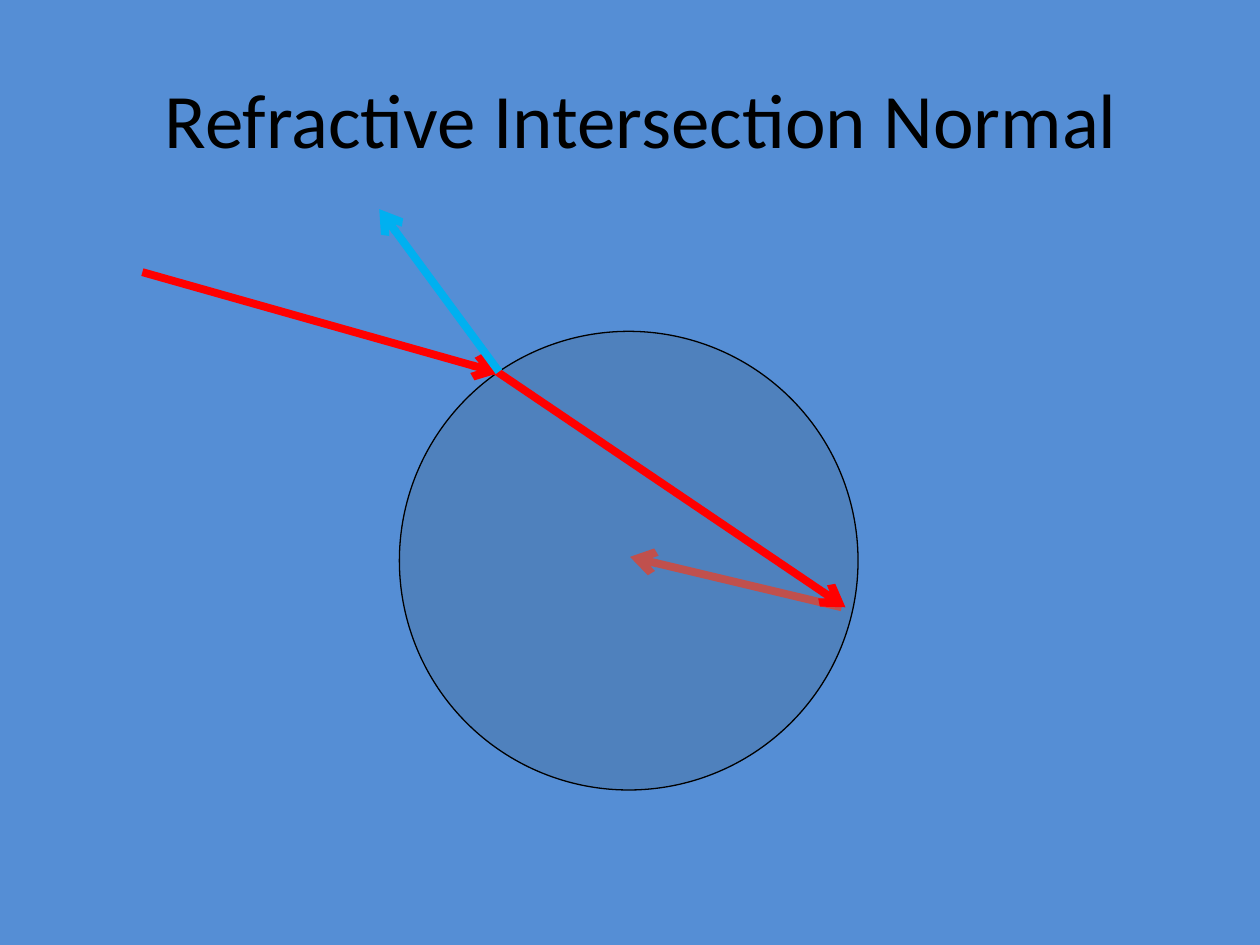
from dataclasses import dataclass

from lxml.etree import SubElement
from pptx import Presentation
from pptx.dml.color import RGBColor
from pptx.enum.shapes import MSO_CONNECTOR, MSO_SHAPE
from pptx.enum.text import MSO_ANCHOR, PP_ALIGN
from pptx.oxml.ns import qn
from pptx.util import Inches, Pt


@dataclass(frozen=True)
class Theme:
    """Colours, type and line sizes of the slide."""
    background: str = "558ED5"
    ink: str = "000000"
    sphere: str = "4F81BD"
    ray: str = "FF0000"
    inner_normal: str = "C0504D"
    outer_normal: str = "00B0F0"
    font: str = "Calibri"
    title_size: float = 44
    outline_width: float = 0.75
    ray_width: float = 4.5


THEME = Theme()


def add_title(slide, left, top, width, height, wording):
    """Place the centred title in its box."""
    title = slide.shapes.add_textbox(Inches(left), Inches(top), Inches(width), Inches(height))
    frame = title.text_frame
    frame.word_wrap = True
    frame.vertical_anchor = MSO_ANCHOR.MIDDLE
    frame.text = wording
    paragraph = frame.paragraphs[0]
    paragraph.alignment = PP_ALIGN.CENTER
    font = paragraph.runs[0].font
    font.name = THEME.font
    font.size = Pt(THEME.title_size)
    font.color.rgb = RGBColor.from_string(THEME.ink)


def add_arrow(slide, start, end, color):
    """Draw a straight arrow with an open head at its end."""
    arrow = slide.shapes.add_connector(
        MSO_CONNECTOR.STRAIGHT, *(Inches(length) for length in (*start, *end)))
    arrow.line.width = Pt(THEME.ray_width)
    arrow.line.color.rgb = RGBColor.from_string(color)
    SubElement(arrow.line._get_or_add_ln(), qn("a:tailEnd"), type="arrow")
    SubElement(arrow._element.spPr, qn("a:effectLst"))


def add_refraction(slide, left, top, diameter):
    """Draw the sphere in its square box, with rays and normals relative to it."""
    sphere = slide.shapes.add_shape(
        MSO_SHAPE.OVAL, Inches(left), Inches(top), Inches(diameter), Inches(diameter))
    sphere.shadow.inherit = False
    sphere.fill.solid()
    sphere.fill.fore_color.rgb = RGBColor.from_string(THEME.sphere)
    sphere.line.color.rgb = RGBColor.from_string(THEME.ink)
    sphere.line.width = Pt(THEME.outline_width)

    arrows = (
        ((-2.04, -0.47), (0.79, 0.33), THEME.ray),
        ((3.51, 2.19), (1.83, 1.79), THEME.inner_normal),
        ((0.76, 0.31), (3.54, 2.19), THEME.ray),
        ((0.79, 0.32), (-0.16, -0.97), THEME.outer_normal),
    )
    for (start_x, start_y), (end_x, end_y), color in arrows:
        add_arrow(slide, (left + start_x, top + start_y), (left + end_x, top + end_y), color)


def main():
    """Build and save the slide."""
    deck = Presentation()
    deck.slide_width, deck.slide_height = Inches(10), Inches(7.5)
    slide = deck.slides.add_slide(deck.slide_layouts[6])
    slide.background.fill.solid()
    slide.background.fill.fore_color.rgb = RGBColor.from_string(THEME.background)
    add_title(slide, 0.84, 0.31, 8.5, 1.25, "Refractive Intersection Normal")
    add_refraction(slide, 3.17, 2.63, 3.64)
    deck.save("out.pptx")


if __name__ == "__main__":
    main()
